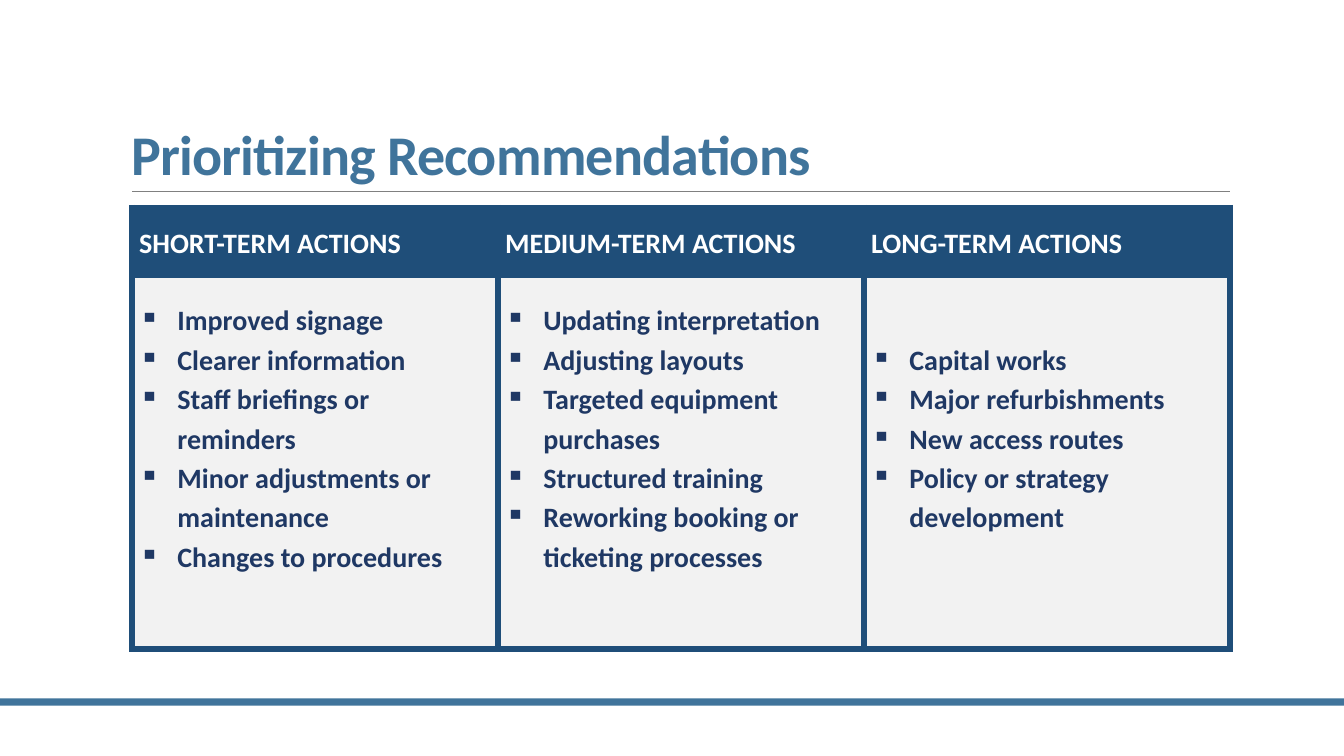
"""Build the slide that sorts recommendations by time frame."""
from lxml import etree
from pptx import Presentation, util as u
from pptx.dml.color import RGBColor
from pptx.enum import shapes, text
from pptx.oxml import ns

NAVY, BLUE = "1F4E79", "40749B"
LEFT, TOP, WIDE = 1.31, 2.06, 10.89
ROWS = [0.67, 3.71]
PLAN = {
    "SHORT-TERM ACTIONS": [
        "Improved signage", "Clearer information", "Staff briefings or reminders",
        "Minor adjustments or maintenance", "Changes to procedures"],
    "MEDIUM-TERM ACTIONS": [
        "Updating interpretation", "Adjusting layouts", "Targeted equipment purchases",
        "Structured training", "Reworking booking or ticketing processes"],
    "LONG-TERM ACTIONS": [
        "Capital works", "Major refurbishments", "New access routes",
        "Policy or strategy development"],
}


def paint(color, hue):
    color.rgb = RGBColor.from_string(hue)


def write(para, words, size, hue):
    run = para.add_run()
    run.text = words
    run.font.name, run.font.size, run.font.bold = "Calibri", u.Pt(size), True
    paint(run.font.color, hue)
    return run


deck = Presentation()
deck.slide_width, deck.slide_height = u.Inches(13.33), u.Inches(7.5)
slide = deck.slides.add_slide(deck.slide_layouts[5])

bar = slide.shapes.add_shape(
    shapes.MSO_SHAPE.RECTANGLE, 0, u.Inches(6.93), deck.slide_width, u.Inches(0.07))
bar.shadow.inherit = False
bar.fill.solid()
paint(bar.fill.fore_color, BLUE)
bar.line.fill.background()

rule = slide.shapes.add_connector(
    shapes.MSO_CONNECTOR.STRAIGHT,
    u.Inches(LEFT), u.Inches(1.9), u.Inches(LEFT + WIDE), u.Inches(1.9))
paint(rule.line.color, "808080")
rule.line.width = u.Pt(0.5)
etree.SubElement(rule._element.spPr, ns.qn("a:effectLst"))

title = slide.shapes.title
title.left, title.top = u.Inches(1.2), u.Inches(0.31)
title.width, title.height = u.Inches(11), u.Inches(1.59)
frame = title.text_frame
frame.auto_size = text.MSO_AUTO_SIZE.NONE
frame.vertical_anchor = text.MSO_ANCHOR.BOTTOM
head = frame.paragraphs[0]
head.alignment = text.PP_ALIGN.LEFT
head.line_spacing = 0.85
run = write(head, "Prioritizing Recommendations", 40, BLUE)
run.font._element.set("spc", "-50")

grid = slide.shapes.add_table(
    len(ROWS), len(PLAN), u.Inches(LEFT), u.Inches(TOP),
    u.Inches(WIDE), u.Inches(sum(ROWS))).table
for row, tall in zip(grid.rows, ROWS):
    row.height = u.Inches(tall)

for col, (name, acts) in enumerate(PLAN.items()):
    grid.columns[col].width = u.Inches(WIDE / len(PLAN))
    for row, (lines, fill, ink) in enumerate(
            [([name], NAVY, "FFFFFF"), (acts, "F2F2F2", "1F3864")]):
        cell = grid.cell(row, col)
        cell.vertical_anchor = text.MSO_ANCHOR.MIDDLE
        cell.margin_left = cell.margin_right = u.Inches(0.07)
        cell.margin_top, cell.margin_bottom = 0, u.Inches(0.5 * row)
        cell.fill.solid()
        paint(cell.fill.fore_color, fill)
        props = cell._tc.get_or_add_tcPr()
        for spot, side in enumerate("LRTB"):
            edge = etree.Element(ns.qn("a:ln" + side), w=str(u.Pt(4.5)))
            solid = etree.SubElement(edge, ns.qn("a:solidFill"))
            etree.SubElement(solid, ns.qn("a:srgbClr"), val=NAVY)
            props.insert(spot, edge)
        for num, line in enumerate(lines):
            body = cell.text_frame
            para = body.add_paragraph() if num else body.paragraphs[0]
            para.line_spacing = 1.15
            para.space_after = u.Pt(8 if num == len(lines) - 1 else 0)
            if row:
                form = para._p.get_or_add_pPr()
                form.set("marL", str(u.Inches(0.38)))
                form.set("indent", str(u.Inches(-0.38)))
                etree.SubElement(form, ns.qn("a:buChar"), char="▪")
            write(para, line, 20, ink)

deck.save("out.pptx")
